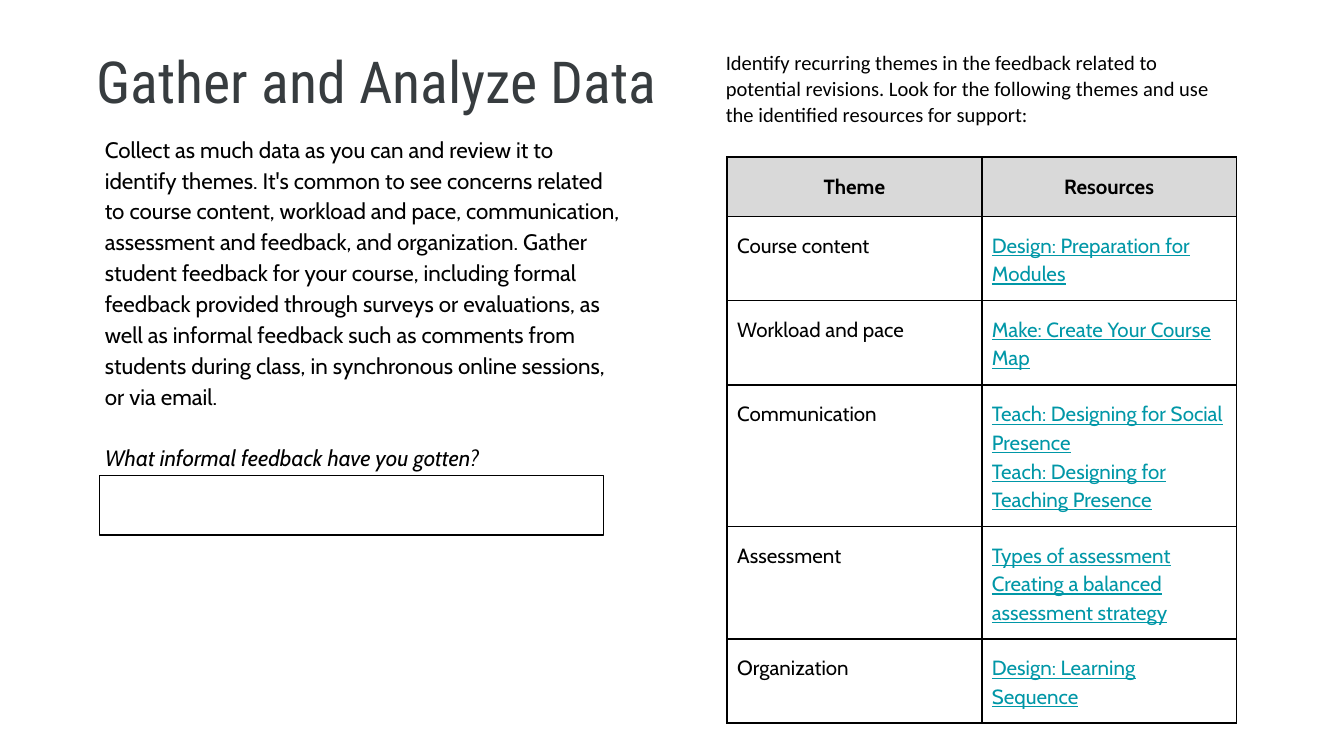
from lxml.etree import SubElement
from pptx import Presentation
from pptx.dml.color import RGBColor
from pptx.enum.shapes import MSO_SHAPE
from pptx.enum.text import MSO_ANCHOR, MSO_AUTO_SIZE, PP_ALIGN
from pptx.oxml.ns import qn
from pptx.util import Inches, Pt

BLACK = RGBColor(0, 0, 0)
SLATE = RGBColor(0x37, 0x3C, 0x3F)
GREY = RGBColor(0xD9, 0xD9, 0xD9)
TEAL = RGBColor(0x00, 0x97, 0xA7)

HEAD = {"name": "Roboto Condensed", "size": Pt(31)}
BODY = {"name": "Cabin", "size": Pt(12)}
NOTE = {"name": "Calibri", "size": Pt(11)}
CELL = {"name": "Cabin", "size": Pt(11)}
LINK = CELL | {"underline": True}
GAP = 1.14

TITLE = "Gather and Analyze Data"
ADVICE = (
    "Collect as much data as you can and review it to identify themes. "
    "It's common to see concerns related to course content, workload and pace, "
    "communication, assessment and feedback, and organization. Gather student "
    "feedback for your course, including formal feedback provided through surveys "
    "or evaluations, as well as informal feedback such as comments from students "
    "during class, in synchronous online sessions, or via email."
)
ASK = "What informal feedback have you gotten?"
INTRO = (
    "Identify recurring themes in the feedback related to potential revisions. "
    "Look for the following themes and use the identified resources for support:"
)
HEADS = ["Theme", "Resources"]
THEMES = [
    ("Course content", ["Design: Preparation for Modules"], 0.59),
    ("Workload and pace", ["Make: Create Your Course Map"], 0.63),
    ("Communication", ["Teach: Designing for Social Presence",
                       "Teach: Designing for Teaching Presence"], 0.98),
    ("Assessment", ["Types of assessment",
                    "Creating a balanced assessment strategy"], 0.83),
    ("Organization", ["Design: Learning Sequence"], 0.51),
]


def style(item, values):
    for key, value in values.items():
        setattr(item, key, value)


def write(frame, lines, font, color=BLACK, **layout):
    """Fill a frame with one paragraph for each line."""
    frame.text = "\n".join(lines)
    for para in frame.paragraphs:
        style(para, layout)
        style(para.font, font)
        para.font.color.rgb = color


def place(shape, left, top, width, height, inset):
    """Set the box and margins of a placeholder."""
    style(shape, {"left": Inches(left), "top": Inches(top),
                  "width": Inches(width), "height": Inches(height)})
    sides = ("margin_left", "margin_top", "margin_right", "margin_bottom")
    style(shape.text_frame, dict.fromkeys(sides, Inches(inset)))
    style(shape.text_frame, {"word_wrap": True, "auto_size": MSO_AUTO_SIZE.NONE,
                             "vertical_anchor": MSO_ANCHOR.TOP})
    return shape.text_frame


def plain(frame, indent=0):
    """Drop the bullets of a body placeholder."""
    for para in frame.paragraphs:
        props = para._p.get_or_add_pPr()
        props.set("marL", str(Inches(indent)))
        props.set("indent", "0")
        SubElement(props, qn("a:buNone"))


def edge(cell):
    props = cell._tc.get_or_add_tcPr()
    for at, side in enumerate(("lnL", "lnR", "lnT", "lnB")):
        line = props.makeelement(qn(f"a:{side}"), {"w": str(Pt(1))})
        fill = SubElement(line, qn("a:solidFill"))
        SubElement(fill, qn("a:srgbClr"), val=str(BLACK))
        props.insert(at, line)


def add_left(slide, left, top):
    """Title, advice and an answer box."""
    title, body = slide.shapes.title, slide.placeholders[1]
    frame = place(title, left, top, 5.3, 0.8, 0.13)
    write(frame, [TITLE], HEAD, SLATE, alignment=PP_ALIGN.LEFT)

    frame = place(body, left + 0.06, top + 0.64, 4.11, 2.49, 0.13)
    write(frame, [ADVICE, ASK], BODY, line_spacing=1.15, space_before=Pt(0))
    plain(frame)
    ask = frame.paragraphs[1]
    ask.space_before = Pt(16.5)
    ask.font.italic = True

    box = slide.shapes.add_shape(MSO_SHAPE.RECTANGLE, Inches(left + 0.15),
                                 Inches(top + 3.33), Inches(3.75), Inches(0.44))
    box.shadow.inherit = False
    box.fill.background()
    box.line.color.rgb = BLACK
    box.line.width = Pt(0.75)


def add_right(slide, left, top):
    """Introduction above the table of themes."""
    frame = place(slide.placeholders[2], left, top, 4.32, 0.78, 0.1)
    write(frame, [INTRO], NOTE, line_spacing=1.06,
          space_before=Pt(0), space_after=Pt(8))
    plain(frame, 0.5)
    add_themes(slide, left + 0.61, top + 0.91, 3.79)


def add_themes(slide, left, top, width):
    highs = [0.44] + [high for _, _, high in THEMES]
    table = slide.shapes.add_table(
        len(highs), len(HEADS), Inches(left), Inches(top),
        Inches(width), Inches(sum(highs))).table
    for row, high in zip(table.rows, highs):
        row.height = Inches(high)

    for cell, text in zip(table.rows[0].cells, HEADS):
        write(cell.text_frame, [text], CELL | {"bold": True},
              line_spacing=GAP, alignment=PP_ALIGN.CENTER)
    for row, (theme, links, _) in enumerate(THEMES, 1):
        write(table.cell(row, 0).text_frame, [theme], CELL, line_spacing=GAP)
        write(table.cell(row, 1).text_frame, links, LINK, TEAL, line_spacing=GAP)

    for at, cell in enumerate(table.iter_cells()):
        style(cell, {"margin_left": Pt(5.4), "margin_right": Pt(5.4),
                     "margin_top": Pt(7.2), "margin_bottom": Pt(7.2)})
        if at < len(HEADS):
            cell.fill.solid()
            cell.fill.fore_color.rgb = GREY
        else:
            cell.fill.background()
        edge(cell)


def main():
    deck = Presentation()
    wide = Inches(10)
    deck.slide_width, deck.slide_height = wide, wide * 9 // 16
    slide = deck.slides.add_slide(deck.slide_layouts[3])
    add_left(slide, 0.59, 0.21)
    add_right(slide, 4.8, 0.26)
    deck.save("out.pptx")


if __name__ == "__main__":
    main()
